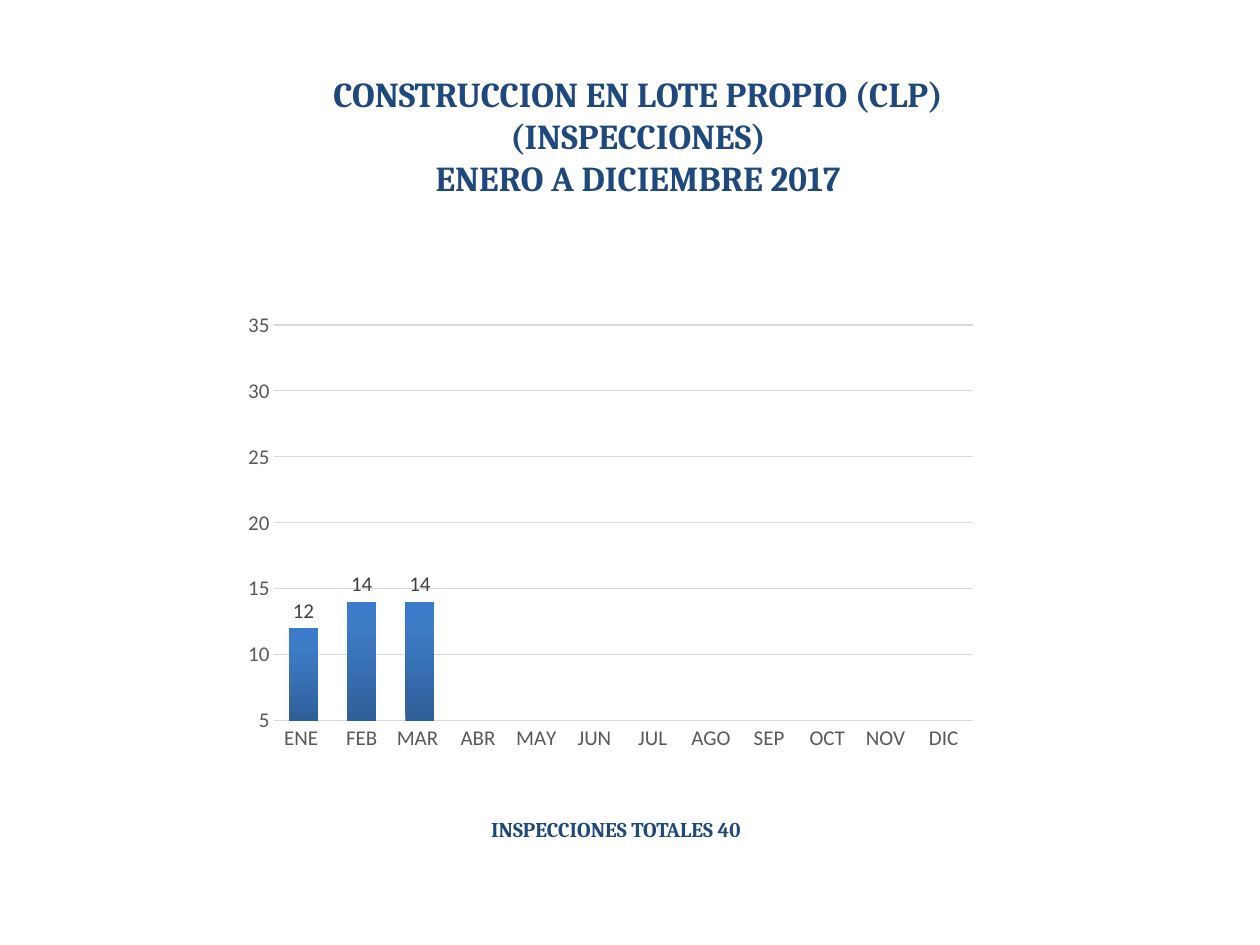
from dataclasses import dataclass

from lxml import etree
from pptx import Presentation
from pptx import util as u
from pptx.chart.data import CategoryChartData
from pptx.dml.color import RGBColor
from pptx.enum import chart as ch, text
from pptx.oxml.ns import qn


@dataclass(frozen=True)
class Theme:
    """Colours, fonts and type sizes of the slide."""
    heading: str = "1F497D"
    axis: str = "595959"
    label: str = "404040"
    rule: str = "D9D9D9"
    bar: tuple = ((0, "2F5F99"), (80, "3D7CC7"), (100, "3A7CCB"))
    serif: str = "Cambria"
    sans: str = "Calibri"
    title_pt: int = 20
    body_pt: int = 12


T = Theme()
W, H = u.Inches(10), u.Inches(7.5)
MONTHS = ["ENE ", "FEB", "MAR ", "ABR", "MAY", "JUN",
          "JUL", "AGO", "SEP", "OCT", "NOV", "DIC"]
COUNTS = [12, 14, 14]


def apply(obj, **values):
    """Set each given attribute on an object."""
    for name, value in values.items():
        setattr(obj, name, value)


def style(font, color, name, size, bold=False):
    """Give a font its face, size, weight and colour."""
    apply(font, name=name, size=u.Pt(size), bold=bold)
    font.color.rgb = RGBColor.from_string(color)


def place(x, y, w, h):
    """Turn shares of the slide's size into lengths."""
    return [int(share * side) for share, side in zip((x, y, w, h), (W, H, W, H))]


def add_heading(s, box, lines, size, **frame):
    """Add a bold serif text box with one paragraph a line."""
    tf = s.shapes.add_textbox(*place(*box)).text_frame
    apply(tf, **frame)
    tf.text = "\n".join(lines)
    for p in tf.paragraphs:
        p.alignment = text.PP_ALIGN.CENTER
        style(p.runs[0].font, T.heading, T.serif, size, True)


def fill_gradient(series, stops, angle):
    """Fill a series with a linear gradient of any number of stops."""
    fill = series.format.fill
    fill.gradient()
    fill.gradient_angle = angle
    gs_list = series.format.fill._xPr.find(".//" + qn("a:gsLst"))
    for gs in list(gs_list):
        gs_list.remove(gs)
    for pos, color in stops:
        gs = etree.SubElement(gs_list, qn("a:gs"), pos=str(pos * 1000))
        etree.SubElement(gs, qn("a:srgbClr"), val=color)


def style_axes(chart):
    """Format both axes and the gridlines."""
    cat, val = chart.category_axis, chart.value_axis
    for axis in (cat, val):
        apply(axis, major_tick_mark=ch.XL_TICK_MARK.NONE,
              minor_tick_mark=ch.XL_TICK_MARK.NONE)
        style(axis.tick_labels.font, T.axis, T.sans, T.body_pt)
    apply(val, minimum_scale=5, maximum_scale=35, major_unit=5,
          has_major_gridlines=True)
    val.format.line.fill.background()
    for line, width in ((cat.format.line, 1),
                        (val.major_gridlines.format.line, 0.75)):
        line.color.rgb = RGBColor.from_string(T.rule)
        line.width = u.Pt(width)


def add_columns(s, box, categories, values):
    """Add the monthly column chart."""
    data = CategoryChartData()
    data.categories = categories
    data.add_series("Series 1", values + [None] * (len(categories) - len(values)))
    chart = s.shapes.add_chart(
        ch.XL_CHART_TYPE.COLUMN_CLUSTERED, *place(*box), data).chart
    apply(chart, has_legend=False, has_title=False)
    style(chart.font, "000000", T.sans, 10)
    style_axes(chart)
    plot = chart.plots[0]
    apply(plot, gap_width=100, overlap=-24, vary_by_categories=False,
          has_data_labels=True)
    apply(plot.data_labels, show_value=True,
          position=ch.XL_LABEL_POSITION.OUTSIDE_END)
    style(plot.data_labels.font, T.label, T.sans, T.body_pt)
    fill_gradient(plot.series[0], T.bar, 90)


def main():
    """Build the slide and save it."""
    prs = Presentation()
    apply(prs, slide_width=W, slide_height=H)
    s = prs.slides.add_slide(prs.slide_layouts[6])
    add_heading(s, (0.38, 0.857, 0.323, 0.04),
                [f"INSPECCIONES TOTALES {sum(COUNTS)}"], T.body_pt,
                word_wrap=True, vertical_anchor=text.MSO_ANCHOR.BOTTOM)
    for p in s.shapes[0].text_frame.paragraphs:
        p.alignment = text.PP_ALIGN.LEFT
    add_heading(s, (0.245, 0.07, 0.523, 0.148),
                ["CONSTRUCCION EN LOTE PROPIO (CLP)", "(INSPECCIONES)",
                 "ENERO A DICIEMBRE 2017"], T.title_pt, word_wrap=False)
    add_columns(s, (0.185, 0.321, 0.599, 0.483), MONTHS, COUNTS)
    prs.save("out.pptx")


if __name__ == "__main__":
    main()
